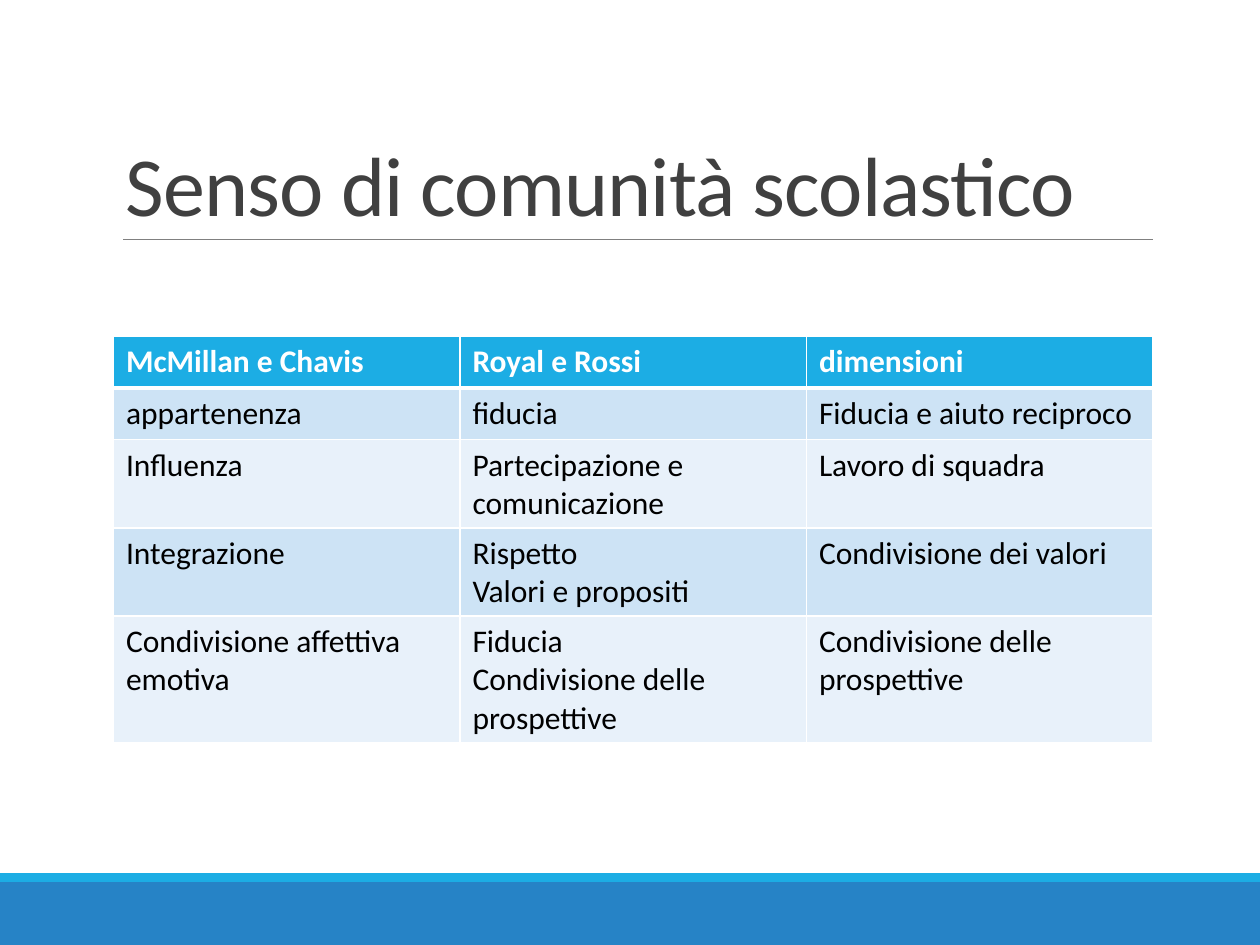
from lxml import etree
from pptx import Presentation
from pptx import util as u
from pptx.dml.color import RGBColor
from pptx.enum import shapes, text
from pptx.oxml.ns import qn

COLOURS = {
    "band": "2683C6", "accent": "1CADE4", "rule": "808080", "title": "404040",
    "white": "FFFFFF", "body": "000000", "odd_row": "CDE3F5", "even_row": "E8F1FA",
}
TITLE_FONT = {"name": "Calibri", "size": u.Pt(48)}
HEADER_FONT = {"name": "Calibri", "size": u.Pt(18), "bold": True}
BODY_FONT = {**HEADER_FONT, "bold": False}

ROWS = [
    ["McMillan e Chavis", "Royal e Rossi", "dimensioni"],
    ["appartenenza", "fiducia", "Fiducia e aiuto reciproco"],
    ["Influenza", "Partecipazione e comunicazione", "Lavoro di squadra"],
    ["Integrazione", "Rispetto\nValori e propositi", "Condivisione dei valori"],
    ["Condivisione affettiva emotiva", "Fiducia\nCondivisione delle prospettive",
     "Condivisione delle prospettive"],
]


def colour(name):
    return RGBColor.from_string(COLOURS[name])


def format_font(font, values, colour_name):
    for key, value in values.items():
        setattr(font, key, value)
    font.color.rgb = colour(colour_name)


def add_footer(slide, left, top, width, height):
    """Wide band with a thin accent strip along its top."""
    strip = u.Inches(0.07)
    for y, h, fill in ((top + strip, height - strip, "band"), (top, strip, "accent")):
        bar = slide.shapes.add_shape(shapes.MSO_SHAPE.RECTANGLE, left, y, width, h)
        bar.shadow.inherit = False
        bar.fill.solid()
        bar.fill.fore_color.rgb = colour(fill)
        bar.line.fill.background()


def add_title(slide, left, top, width, height, wording):
    """Title standing on a thin rule."""
    bottom = top + height
    rule = slide.shapes.add_connector(
        shapes.MSO_CONNECTOR.STRAIGHT, left + u.Inches(0.08), bottom, left + width, bottom)
    rule.line.color.rgb = colour("rule")
    rule.line.width = u.Pt(0.5)
    etree.SubElement(rule._element.spPr, qn("a:effectLst"))

    frame = slide.shapes.add_textbox(left, top, width, height).text_frame
    frame.word_wrap = True
    frame.vertical_anchor = text.MSO_ANCHOR.BOTTOM
    heading = frame.paragraphs[0]
    heading.line_spacing = 0.85
    run = heading.add_run()
    run.text = wording
    format_font(run.font, TITLE_FONT, "title")
    run._r.get_or_add_rPr().set("spc", "-50")


def add_borders(cell, bottom_width):
    """White cell edges; the top edge is given by the row above."""
    edges = {"a:lnL": 1, "a:lnR": 1, "a:lnB": bottom_width}
    for tag, width in edges.items():
        edge = etree.SubElement(cell._tc.get_or_add_tcPr(), qn(tag), w=str(u.Pt(width)))
        fill = etree.SubElement(edge, qn("a:solidFill"))
        etree.SubElement(fill, qn("a:srgbClr"), val=COLOURS["white"])


def add_comparison(slide, left, top, width, row_height):
    """Comparison table with a header and alternating rows."""
    table = slide.shapes.add_table(
        len(ROWS), len(ROWS[0]), left, top, width, row_height * len(ROWS)).table
    for r, row in enumerate(ROWS):
        if r == 0:
            font, ink, fill, bottom = HEADER_FONT, "white", "accent", 3
        else:
            font, ink, bottom = BODY_FONT, "body", 1
            fill = "odd_row" if r % 2 else "even_row"
        for c, wording in enumerate(row):
            cell = table.cell(r, c)
            cell.text = wording
            for paragraph in cell.text_frame.paragraphs:
                for run in paragraph.runs:
                    format_font(run.font, font, ink)
            add_borders(cell, bottom)
            cell.fill.solid()
            cell.fill.fore_color.rgb = colour(fill)


def main():
    deck = Presentation()
    deck.slide_width, deck.slide_height = u.Inches(10), u.Inches(7.5)
    slide = deck.slides.add_slide(deck.slide_layouts[6])
    left, width = u.Inches(0.9), u.Inches(8.25)

    add_footer(slide, 0, u.Inches(6.93), deck.slide_width, u.Inches(0.57))
    add_title(slide, left, u.Inches(0.31), width, u.Inches(1.59),
              "Senso di comunità scolastico")
    add_comparison(slide, left, u.Inches(2.67), width, u.Inches(0.41))
    deck.save("out.pptx")


if __name__ == "__main__":
    main()
